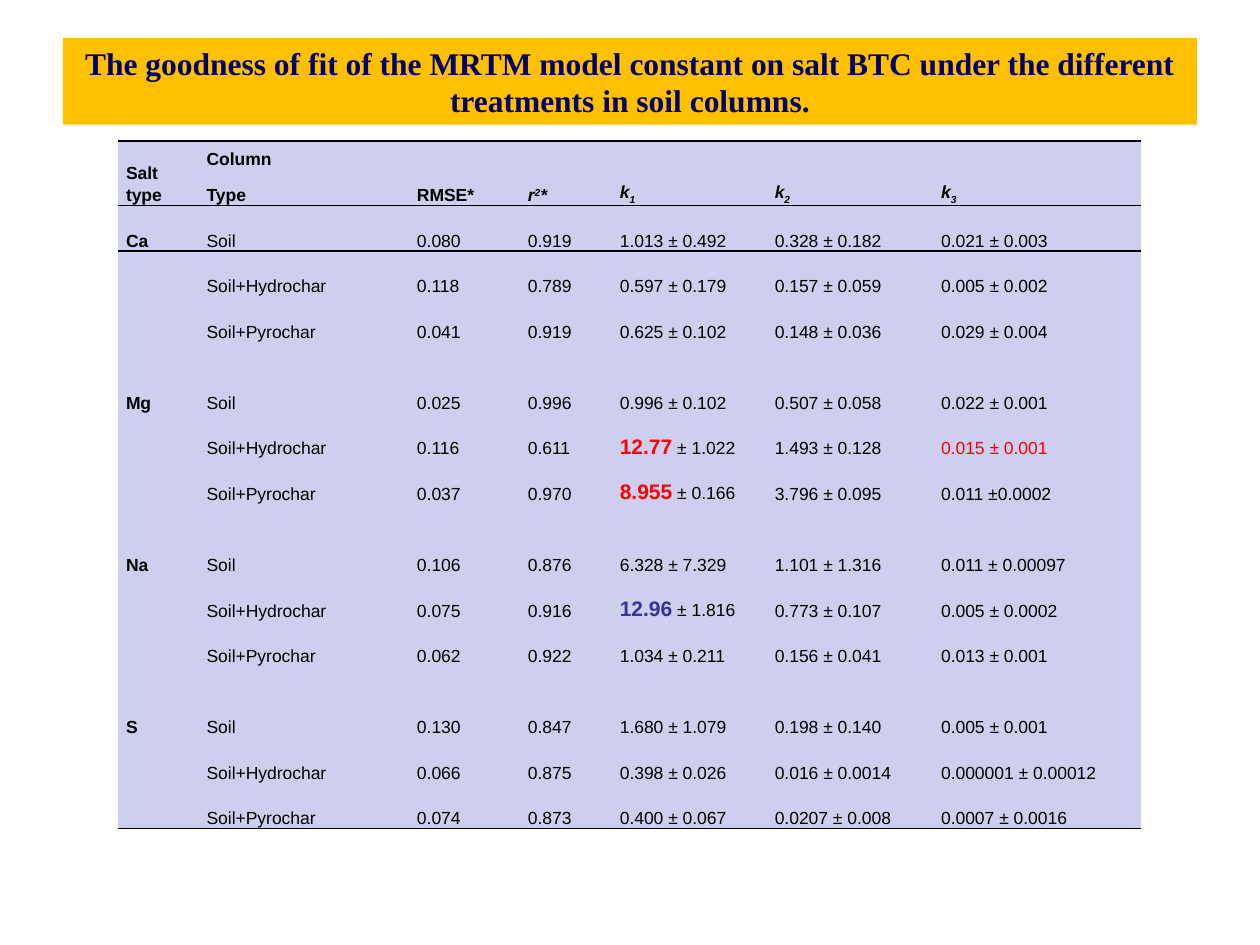
from dataclasses import dataclass

from lxml import etree
from pptx import Presentation
from pptx.dml.color import RGBColor as Color
from pptx.enum.shapes import MSO_SHAPE as Preset
from pptx.enum.text import MSO_ANCHOR as Anchor, PP_ALIGN as Align
from pptx.oxml.ns import qn
from pptx.util import Inches, Pt


@dataclass(frozen=True)
class Theme:
    banner: Color = Color.from_string("FFC000")
    title: Color = Color.from_string("000066")
    panel: Color = Color.from_string("CECEEF")
    ink: Color = Color.from_string("000000")
    red: Color = Color.from_string("FF0000")
    blue: Color = Color.from_string("333399")
    title_font: str = "Times New Roman"
    body_font: str = "Arial"
    title_size: Pt = Pt(18)
    body_size: Pt = Pt(10)
    strong_size: Pt = Pt(12)
    rule: Pt = Pt(1)


THEME = Theme()
NO_STYLE = "{2D5ABB26-0587-4C30-8999-92F81FD0307C}"

# Span formats: font values, with an optional baseline shift
BODY = {"name": THEME.body_font, "size": THEME.body_size, "bold": False, "color": THEME.ink}
RED = BODY | {"color": THEME.red}
STRONG_RED = RED | {"size": THEME.strong_size, "bold": True}
STRONG_BLUE = STRONG_RED | {"color": THEME.blue}
HEAD = BODY | {"bold": True}
SYMBOL = HEAD | {"italic": True}
SUPER = SYMBOL | {"baseline": "30000"}
SUB = SYMBOL | {"baseline": "-25000"}
TITLE = HEAD | {"name": THEME.title_font, "size": THEME.title_size, "color": THEME.title}

TITLE_TEXT = ("The goodness of fit of the MRTM model constant on salt BTC "
              "under the different treatments in soil columns.")

# A cell is a list of paragraphs; a paragraph is a list of (text, format) spans
HEADER = [
    [[("Salt type", HEAD)]],
    [[("Column", HEAD)], [("Type", HEAD)]],
    [[("RMSE*", HEAD)]],
    [[("r", SYMBOL), ("2", SUPER), ("*", SYMBOL)]],
    *[[[("k", SYMBOL), (index, SUB)]] for index in "123"],
]
TREATMENTS = ["Soil", "Soil+Hydrochar", "Soil+Pyrochar"]
RESULTS = {
    "Ca": [
        ["0.080", "0.919", "1.013 ± 0.492", "0.328 ± 0.182", "0.021 ± 0.003"],
        ["0.118", "0.789", "0.597 ± 0.179", "0.157 ± 0.059", "0.005 ± 0.002"],
        ["0.041", "0.919", "0.625 ± 0.102", "0.148 ± 0.036", "0.029 ± 0.004"],
    ],
    "Mg": [
        ["0.025", "0.996", "0.996 ± 0.102", "0.507 ± 0.058", "0.022 ± 0.001"],
        ["0.116", "0.611", [("12.77", STRONG_RED), (" ± 1.022", BODY)],
         "1.493 ± 0.128", [("0.015 ± 0.001", RED)]],
        ["0.037", "0.970", [("8.955", STRONG_RED), (" ± 0.166", BODY)],
         "3.796 ± 0.095", "0.011 ±0.0002"],
    ],
    "Na": [
        ["0.106", "0.876", "6.328 ± 7.329", "1.101 ± 1.316", "0.011 ± 0.00097"],
        ["0.075", "0.916", [("12.96", STRONG_BLUE), (" ± 1.816", BODY)],
         "0.773 ± 0.107", "0.005 ± 0.0002"],
        ["0.062", "0.922", "1.034 ± 0.211", "0.156 ± 0.041", "0.013 ± 0.001"],
    ],
    "S": [
        ["0.130", "0.847", "1.680 ± 1.079", "0.198 ± 0.140", "0.005 ± 0.001"],
        ["0.066", "0.875", "0.398 ± 0.026", "0.016 ± 0.0014", "0.000001 ± 0.00012"],
        ["0.074", "0.873", "0.400 ± 0.067", "0.0207 ± 0.008", "0.0007 ± 0.0016"],
    ],
}
COLUMN_WIDTHS = [0.64, 1.67, 0.88, 0.73, 1.23, 1.32, 1.65]
HEADER_HEIGHT, GAP_HEIGHT = Inches(0.51), Inches(0.2)


def set_all(target, values):
    for name, value in values.items():
        setattr(target, name, value)


def add_span(para, text, style):
    span = para.add_run()
    span.text = text
    for name, value in style.items():
        if name == "color":
            span.font.color.rgb = value
        elif name == "baseline":
            span.font._element.set("baseline", value)
        else:
            setattr(span.font, name, value)


def fill_cell(cell, paragraphs):
    cell.fill.solid()
    cell.fill.fore_color.rgb = THEME.panel
    set_all(cell, {"margin_left": Inches(0.06), "margin_right": Inches(0.06),
                   "margin_top": 0, "margin_bottom": 0,
                   "vertical_anchor": Anchor.BOTTOM})
    frame = cell.text_frame
    if not paragraphs:
        # Keep an empty cell from stretching its row
        end = frame.paragraphs[0]._p.get_or_add_endParaRPr()
        end.set("sz", str(int(THEME.body_size.pt * 100)))
    for index, spans in enumerate(paragraphs):
        para = frame.add_paragraph() if index else frame.paragraphs[0]
        set_all(para, {"line_spacing": 1.15, "space_after": Pt(8)})
        for text, style in spans:
            add_span(para, text, style)


def rule_cell(cell, sides):
    """Draw lines on the given sides, in the order lnT, lnB."""
    props = cell._tc.get_or_add_tcPr()
    for index, side in enumerate(sides):
        line = etree.Element(qn(f"a:{side}"), w=str(THEME.rule))
        fill = etree.SubElement(line, qn("a:solidFill"))
        etree.SubElement(fill, qn("a:srgbClr"), val=str(THEME.ink))
        props.insert(index, line)


def table_rows():
    """Header, then three rows for each salt, with a blank row between salts."""
    rows = [HEADER]
    for salt, group in RESULTS.items():
        if len(rows) > 1:
            rows.append([[]] * len(HEADER))
        for index, (treatment, values) in enumerate(zip(TREATMENTS, group)):
            cells = [[[(salt, HEAD)]] if index == 0 else []]
            for value in [treatment, *values]:
                cells.append([[(value, BODY)] if isinstance(value, str) else value])
            rows.append(cells)
    return rows


def add_title(page, left, top, width, height):
    banner = page.shapes.add_shape(Preset.RECTANGLE, left, top, width, height)
    banner.shadow.inherit = False
    banner.fill.solid()
    banner.fill.fore_color.rgb = THEME.banner
    banner.line.fill.background()
    frame = banner.text_frame
    set_all(frame, {"word_wrap": True, "vertical_anchor": Anchor.MIDDLE})
    para = frame.paragraphs[0]
    para.alignment = Align.CENTER
    add_span(para, TITLE_TEXT, TITLE)


def add_fit_table(page, left, top, width, height):
    rows = table_rows()
    holder = page.shapes.add_table(len(rows), len(HEADER), left, top, width, height)
    table = holder.table
    set_all(table, {"first_row": False, "horz_banding": False})
    table._tbl.tblPr.find(qn("a:tableStyleId")).text = NO_STYLE

    # Columns and rows
    for column, size in zip(table.columns, COLUMN_WIDTHS):
        column.width = Inches(size)
    gaps = len(RESULTS) - 1
    data_count = len(RESULTS) * len(TREATMENTS)
    data_height = (height - HEADER_HEIGHT - gaps * GAP_HEIGHT) // data_count
    for index, (row, cells) in enumerate(zip(table.rows, rows)):
        row.height = data_height if any(cells) else GAP_HEIGHT
        if index == 0:
            row.height = HEADER_HEIGHT
        for cell, paragraphs in zip(row.cells, cells):
            fill_cell(cell, paragraphs)

    # Rules above and below the header, and under the last row
    for index, sides in ((0, ["lnT", "lnB"]), (1, ["lnT"]), (len(rows) - 1, ["lnB"])):
        for cell in table.rows[index].cells:
            rule_cell(cell, sides)


def main():
    deck = Presentation()
    set_all(deck, {"slide_width": Inches(10), "slide_height": Inches(7.5)})
    page = deck.slides.add_slide(deck.slide_layouts[6])
    add_title(page, Inches(0.5), Inches(0.3), Inches(9), Inches(0.69))
    add_fit_table(page, Inches(0.94), Inches(1.12), Inches(8.11), Inches(5.46))
    deck.save("out.pptx")


if __name__ == "__main__":
    main()
